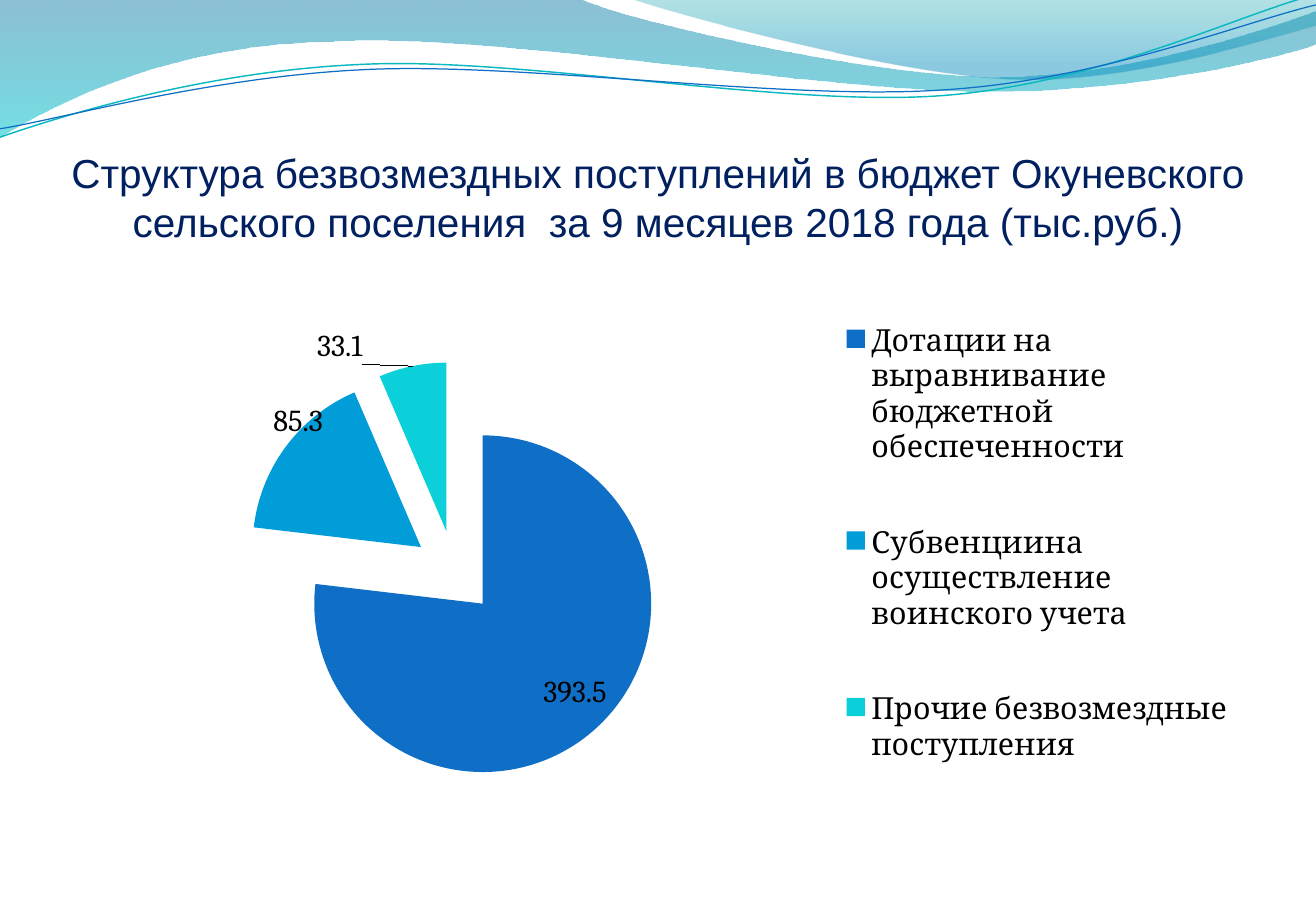
from dataclasses import dataclass

import lxml.etree
import pptx
import pptx.chart.data
import pptx.dml.color
import pptx.enum.chart
import pptx.enum.text
import pptx.oxml.ns
import pptx.util
from pptx.util import Inches

Point = tuple[float, float]
UNITS_PER_INCH = 1000


@dataclass
class Stop:
    position: float
    color: str
    opacity: int


@dataclass
class Wave:
    """An outline: two numbers are a line's end, six numbers are a Bezier curve."""
    start: Point
    segments: list[tuple[float, ...]]
    stops: tuple[Stop, ...] = ()
    line_color: str = ""
    line_width: float = 0


@dataclass
class Income:
    name: str
    amount: float
    color: str
    label_place: pptx.enum.chart.XL_LABEL_POSITION
    label_shift: Point


WAVES = [
    Wave((0, 0), [
        (4.77, -0.01), (5.15, 0.17, 7.19, 0.63, 8.22, 0.63),
        (9.24, 0.63, 10.38, 0.26, 10.83, 0.09), (10.84, 0.36),
        (10.65, 0.44, 9.42, 0.76, 8.08, 0.75), (6.74, 0.75, 4.14, 0.28, 2.79, 0.34),
        (1.4, 0.36, 0.5, 0.83, -0.01, 1.13)],
        (Stop(0, "0074A1", 45), Stop(1, "00C6CF", 55))),
    Wave((5.19, -0.01), [
        (5.52, 0.11, 7.39, 0.62, 8.33, 0.65), (9.27, 0.69, 10.42, 0.32, 10.83, 0.21),
        (10.83, 0)],
        (Stop(0, "00A1A9", 30), Stop(0.8, "008BBF", 45))),
    Wave((0, 1.13), [
        (0.52, 0.95, 1.71, 0.58, 3, 0.53), (4.28, 0.47, 6.42, 0.88, 7.72, 0.79),
        (9.02, 0.7, 10.17, 0.13, 10.81, -0.04)],
        line_color="0AB8BF", line_width=0.85),
    Wave((0, 1.06), [
        (0.51, 0.98, 1.77, 0.62, 3.07, 0.57), (4.36, 0.52, 6.47, 0.83, 7.76, 0.74),
        (9.06, 0.66, 10.2, 0.19, 10.83, 0.04)],
        line_color="0F6FC6", line_width=0.75),
]

LABEL = pptx.enum.chart.XL_LABEL_POSITION
INCOMES = [
    Income("Дотации на выравнивание бюджетной обеспеченности", 393.5, "0F6FC6",
           LABEL.BEST_FIT, (0, 0)),
    Income("Субвенциина осуществление воинского учета", 85.3, "009DD9",
           LABEL.OUTSIDE_END, (0.036, -0.006)),
    Income("Прочие безвозмездные поступления", 33.1, "0BD0D9",
           LABEL.OUTSIDE_END, (-0.041, 0.009)),
]


def rgb(color: str) -> pptx.dml.color.RGBColor:
    return pptx.dml.color.RGBColor.from_string(color)


def add_child(parent, tag: str, value: object = None):
    child = lxml.etree.SubElement(parent, pptx.oxml.ns.qn(tag))
    if value is not None:
        child.set("val", str(value))
    return child


def to_units(length: float) -> int:
    return round(length * UNITS_PER_INCH)


def bend_lines(shape, wave: Wave) -> None:
    """Turn the straight segments that stand for curves into Bezier curves."""
    ends = [wave.start] + [segment[-2:] for segment in wave.segments]
    left = min(x for x, _ in ends)
    top = min(y for _, y in ends)
    lines = list(shape._element.iter(pptx.oxml.ns.qn("a:lnTo")))
    for line, segment in zip(lines, wave.segments):
        if len(segment) == 2:
            continue
        curve = add_child(line.getparent(), "a:cubicBezTo")
        for x, y in zip(segment[::2], segment[1::2]):
            node = add_child(curve, "a:pt")
            node.set("x", str(to_units(x) - to_units(left)))
            node.set("y", str(to_units(y) - to_units(top)))
        line.getparent().replace(line, curve)


def draw_wave(page, wave: Wave) -> None:
    ends = [tuple(map(to_units, segment[-2:])) for segment in wave.segments]
    builder = page.shapes.build_freeform(
        *map(to_units, wave.start), scale=Inches(1) / UNITS_PER_INCH)
    builder.add_line_segments(ends, close=bool(wave.stops))
    shape = builder.convert_to_shape()
    bend_lines(shape, wave)
    shape.shadow.inherit = False
    if wave.stops:
        shape.line.fill.background()
        shape.fill.gradient()
        shape.fill.gradient_angle = 270
        for target, stop in zip(shape.fill.gradient_stops, wave.stops):
            target.position = stop.position
            target.color.rgb = rgb(stop.color)
        for node, stop in zip(shape._element.spPr.iter(pptx.oxml.ns.qn("a:srgbClr")), wave.stops):
            add_child(node, "a:alpha", stop.opacity * 1000)
    else:
        shape.fill.background()
        shape.line.color.rgb = rgb(wave.line_color)
        shape.line.width = pptx.util.Pt(wave.line_width)


def draw_title(page, text: str) -> None:
    box = page.shapes.add_textbox(Inches(0.54), Inches(0.77), Inches(9.75), Inches(1.25))
    frame = box.text_frame
    frame.text = text
    frame.word_wrap = True
    frame.vertical_anchor = pptx.enum.text.MSO_ANCHOR.BOTTOM
    frame.margin_left = frame.margin_right = frame.margin_bottom = 0
    frame.margin_top = Inches(0.05)
    para = frame.paragraphs[0]
    para.alignment = pptx.enum.text.PP_ALIGN.CENTER
    font = para.runs[0].font
    font.name, font.size, font.color.rgb = "Arial", pptx.util.Pt(24), rgb("002060")


def set_layout(parent, index: int, **settings: object) -> None:
    """Give a chart part a manual layout, placed as the child at index."""
    for old in parent.findall(pptx.oxml.ns.qn("c:layout")):
        parent.remove(old)
    layout = add_child(parent, "c:layout")
    manual = add_child(layout, "c:manualLayout")
    for name, value in settings.items():
        add_child(manual, f"c:{name}", value)
    parent.insert(index, layout)


def draw_pie(page, incomes: list[Income]) -> None:
    data = pptx.chart.data.CategoryChartData()
    data.categories = [income.name for income in incomes]
    data.add_series("Series 1", [income.amount for income in incomes])
    chart = page.shapes.add_chart(
        pptx.enum.chart.XL_CHART_TYPE.PIE, Inches(0.54), Inches(2.12),
        Inches(9.75), Inches(4.8), data).chart
    chart.has_title = False
    chart.font.name, chart.font.size = "Cambria", pptx.util.Pt(18)
    chart.font.color.rgb = rgb("000000")
    chart.has_legend = True
    chart.legend.position = pptx.enum.chart.XL_LEGEND_POSITION.RIGHT
    chart.legend.include_in_layout = False
    set_layout(chart.legend._element, 1, xMode="edge", yMode="edge",
               x=0.65, y=0.01, w=0.34, h=0.96)
    plot_area = chart._chartSpace.chart.plotArea
    set_layout(plot_area, 0, layoutTarget="inner", xMode="edge", yMode="edge",
               x=0.058, y=0.179, w=0.541, h=0.722)

    series = chart.plots[0].series[0]
    explosion = add_child(series._element, "c:explosion", 25)
    series._element.find(pptx.oxml.ns.qn("c:tx")).addnext(explosion)
    series.data_labels.show_value = True
    for index, income in enumerate(incomes):
        point = series.points[index]
        point.format.fill.solid()
        point.format.fill.fore_color.rgb = rgb(income.color)
        point.data_label.position = income.label_place
    for node, income in zip(series._element.iter(pptx.oxml.ns.qn("c:dLbl")), incomes):
        if any(income.label_shift):
            set_layout(node, 1, x=income.label_shift[0], y=income.label_shift[1])


def main() -> None:
    deck = pptx.Presentation()
    deck.slide_width, deck.slide_height = Inches(10.83), Inches(7.5)
    page = deck.slides.add_slide(deck.slide_layouts[6])
    for wave in WAVES:
        draw_wave(page, wave)
    draw_title(page, "Структура безвозмездных поступлений в бюджет Окуневского "
                     "сельского поселения  за 9 месяцев 2018 года (тыс.руб.)")
    draw_pie(page, INCOMES)
    deck.save("out.pptx")


if __name__ == "__main__":
    main()
